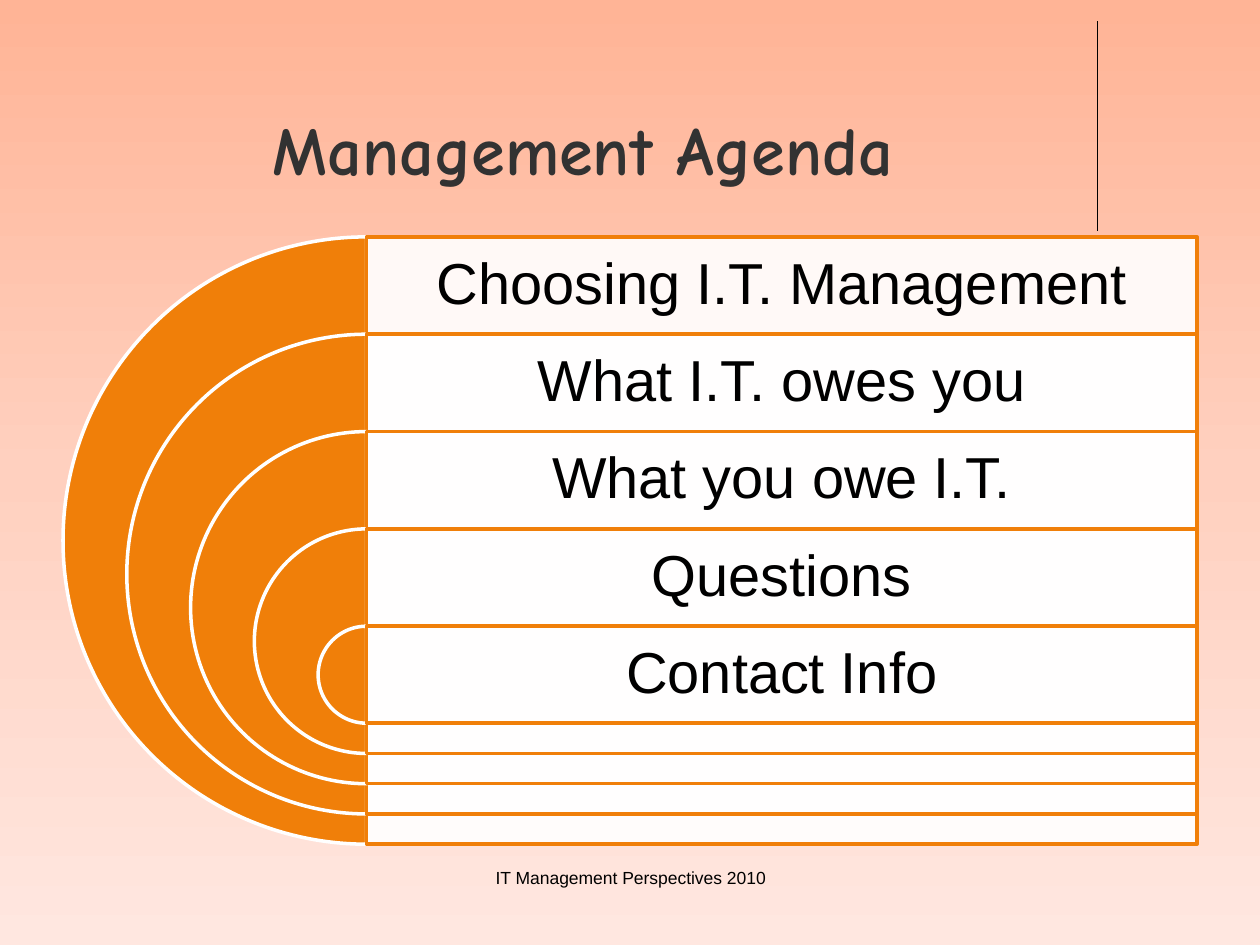
from copy import deepcopy
from dataclasses import dataclass

from pptx import Presentation
from pptx.dml.color import RGBColor
from pptx.enum import shapes, text
from pptx.oxml import ns, xmlchemy as xml
from pptx.util import Inches, Pt


@dataclass(frozen=True)
class Theme:
    sky: tuple = ("FFB496", "FFD0BF", "FFE7E0")
    fill: str = "F07F09"
    white: str = "FFFFFF"
    ink: str = "000000"
    head: str = "323232"
    title: int = 39
    item: int = 33
    foot: int = 10
    font: str = "Arial"
    script: str = "Comic Neue"


theme = Theme()


def write(shape, words, size, color=theme.ink, font=theme.font, bold=False,
          anchor=text.MSO_ANCHOR.TOP, inset=None, space=None):
    frame = shape.text_frame
    frame.word_wrap = True
    frame.auto_size = text.MSO_AUTO_SIZE.NONE
    frame.vertical_anchor = anchor
    if inset is not None:
        frame.margin_left = frame.margin_right = Inches(inset)
        frame.margin_top = frame.margin_bottom = Inches(inset)
    para = frame.paragraphs[0]
    para.alignment = text.PP_ALIGN.CENTER
    para.line_spacing = space
    run = para.add_run()
    run.text = words
    run.font.name, run.font.size, run.font.bold = font, Pt(size), bold
    run.font.color.rgb = RGBColor.from_string(color)


def draw(group, kind, box, fill, line):
    shape = group.shapes.add_shape(kind, *map(Inches, box))
    shape.shadow.inherit = False
    shape.fill.solid()
    shape.fill.fore_color.rgb = RGBColor.from_string(fill)
    shape.line.color.rgb = RGBColor.from_string(line)
    shape.line.width = Pt(2)
    return shape


deck = Presentation()
deck.slide_width, deck.slide_height = Inches(10), Inches(7.5)
slide = deck.slides.add_slide(deck.slide_layouts[5])

# Background fades from top to bottom
back = slide.background.fill
back.gradient()
back.gradient_angle = 270
first = slide.element.find(".//" + ns.qn("a:gs"))
first.addnext(deepcopy(first))
for stop, place, color in zip(back.gradient_stops, (0, 0.5, 1), theme.sky):
    stop.position = place
    stop.color.rgb = RGBColor.from_string(color)

# Title and the rule beside it
rule = slide.shapes.add_connector(
    shapes.MSO_CONNECTOR.STRAIGHT,
    Inches(8.71), Inches(0.17), Inches(8.71), Inches(1.83))
rule.line.color.rgb = RGBColor.from_string(theme.ink)
rule.line.width = Pt(0.75)
rule.element.spPr.append(xml.OxmlElement("a:effectLst"))

title = slide.shapes.title
title.left, title.top = Inches(0.5), Inches(0.13)
title.width, title.height = Inches(8.25), Inches(1.42)
write(title, "Management Agenda", theme.title, color=theme.head,
      font=theme.script, bold=True, anchor=text.MSO_ANCHOR.BOTTOM)

# Nested half circles, each with a panel and its agenda item
items = ("Choosing I.T. Management", "What I.T. owes you",
         "What you owe I.T.", "Questions", "Contact Info")
mid, wide, top, row, full = 2.91, 6.59, 1.88, 0.77, 4.82
gaps = len(items) - 1
drop = (4.97 - top) / gaps
shrink = (full - row) / gaps
agenda = slide.shapes.add_group_shape()
for i, item in enumerate(items):
    y, size = top + i * drop, full - i * shrink
    pie = draw(agenda, shapes.MSO_SHAPE.PIE, (mid - size / 2, y, size, size),
               theme.fill, theme.white)
    pie.adjustments[0], pie.adjustments[1] = 54, 162
    panel = draw(agenda, shapes.MSO_SHAPE.RECTANGLE, (mid, y, wide, size),
                 theme.white, theme.fill)
    alpha = xml.OxmlElement("a:alpha")
    alpha.set("val", "90000")
    panel.element.spPr.find(ns.qn("a:solidFill"))[0].append(alpha)
    label = agenda.shapes.add_textbox(*map(Inches, (mid, y, wide, row)))
    write(label, item, theme.item, anchor=text.MSO_ANCHOR.MIDDLE,
          inset=0.14, space=0.9)

foot = slide.shapes.add_textbox(
    Inches(3.42), Inches(6.83), Inches(3.17), Inches(0.5))
write(foot, "IT Management Perspectives 2010", theme.foot)

deck.save("out.pptx")
